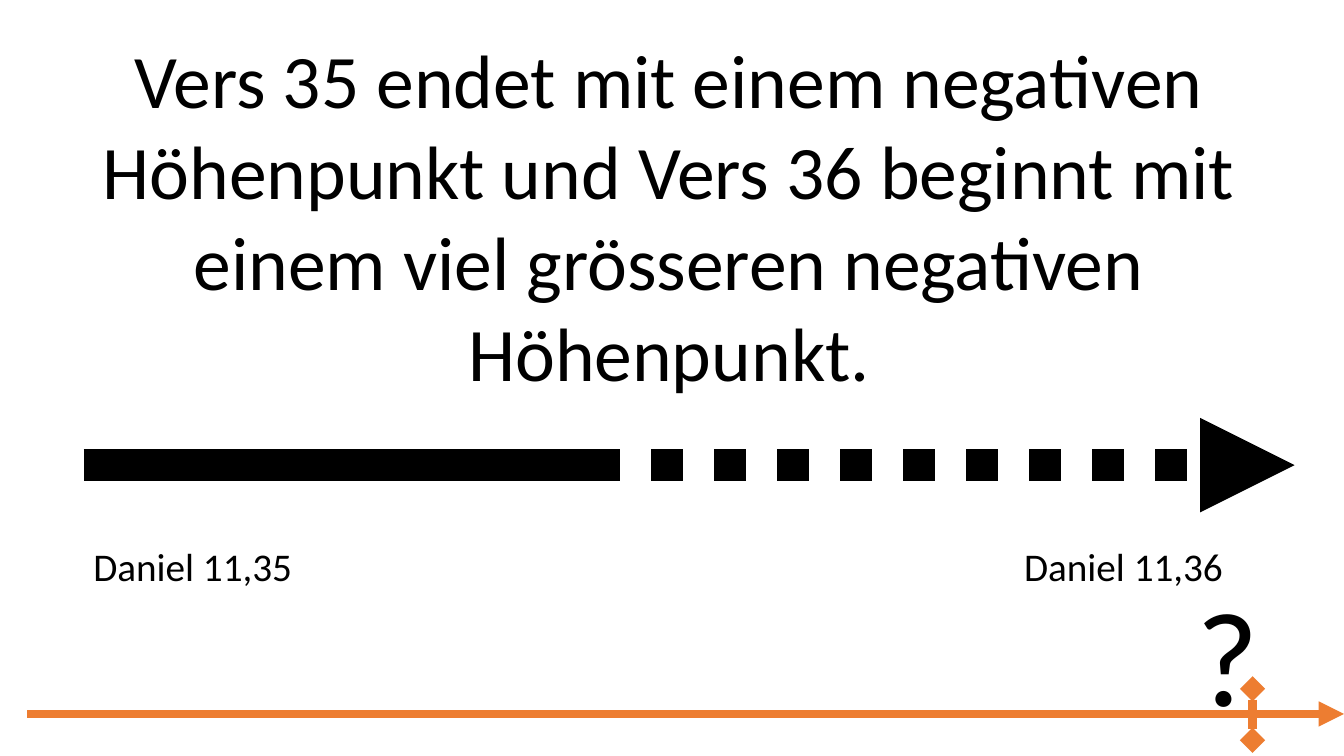
from lxml.etree import SubElement
from pptx import Presentation
from pptx.dml.color import RGBColor
from pptx.enum.dml import MSO_LINE
from pptx.enum.shapes import MSO_CONNECTOR
from pptx.enum.text import PP_ALIGN
from pptx.oxml.ns import qn
from pptx.util import Emu, Pt

EMU_PER_PX = 9525
BLACK = "000000"
ORANGE = "ED7D31"


def px(n):
    return Emu(n * EMU_PER_PX)


def rgb(value):
    return RGBColor.from_string(value)


def add_line(s, x1, y1, x2, y2, color, width, dash=None, head=None, tail=None):
    sp = s.shapes.add_connector(
        MSO_CONNECTOR.STRAIGHT, px(x1), px(y1), px(x2), px(y2))
    sp.line.color.rgb = rgb(color)
    sp.line.width = Pt(width)
    if dash:
        sp.line.dash_style = dash
    ln = sp.line._get_or_add_ln()
    for tag, kind in (("a:headEnd", head), ("a:tailEnd", tail)):
        if kind:
            SubElement(ln, qn(tag), type=kind)
    SubElement(sp._element.spPr, qn("a:effectLst"))


def add_text(s, text, x, y, w, h, size, color=BLACK, font="Calibri"):
    sp = s.shapes.add_textbox(px(x), px(y), px(w), px(h))
    tf = sp.text_frame
    tf.word_wrap = True
    p = tf.paragraphs[0]
    p.alignment = PP_ALIGN.CENTER
    r = p.add_run()
    r.text = text
    r.font.size = Pt(size)
    r.font.name = font
    r.font.color.rgb = rgb(color)


def main():
    prs = Presentation()
    prs.slide_width, prs.slide_height = px(1280), px(720)
    s = prs.slides.add_slide(prs.slide_layouts[6])

    add_line(s, 80, 443, 1233, 443, BLACK, 22.5,
             dash=MSO_LINE.ROUND_DOT, tail="triangle")
    add_text(s, "Vers 35 endet mit einem negativen Höhenpunkt und Vers 36 "
             "beginnt mit einem viel grösseren negativen Höhenpunkt.",
             80, 27, 1114, 359, size=54)
    add_text(s, "Daniel 11,35", 56, 512, 255, 55, size=28)
    add_text(s, "Daniel 11,36", 894, 512, 352, 55, size=28)
    add_line(s, 26, 680, 1280, 680, ORANGE, 6, tail="triangle")
    add_line(s, 1193, 656, 1193, 705, ORANGE, 6, head="diamond", tail="diamond")
    add_line(s, 80, 443, 586, 443, BLACK, 22.5)
    add_text(s, "?", 1113, 540, 112, 165, size=96)

    prs.save("out.pptx")


if __name__ == "__main__":
    main()
